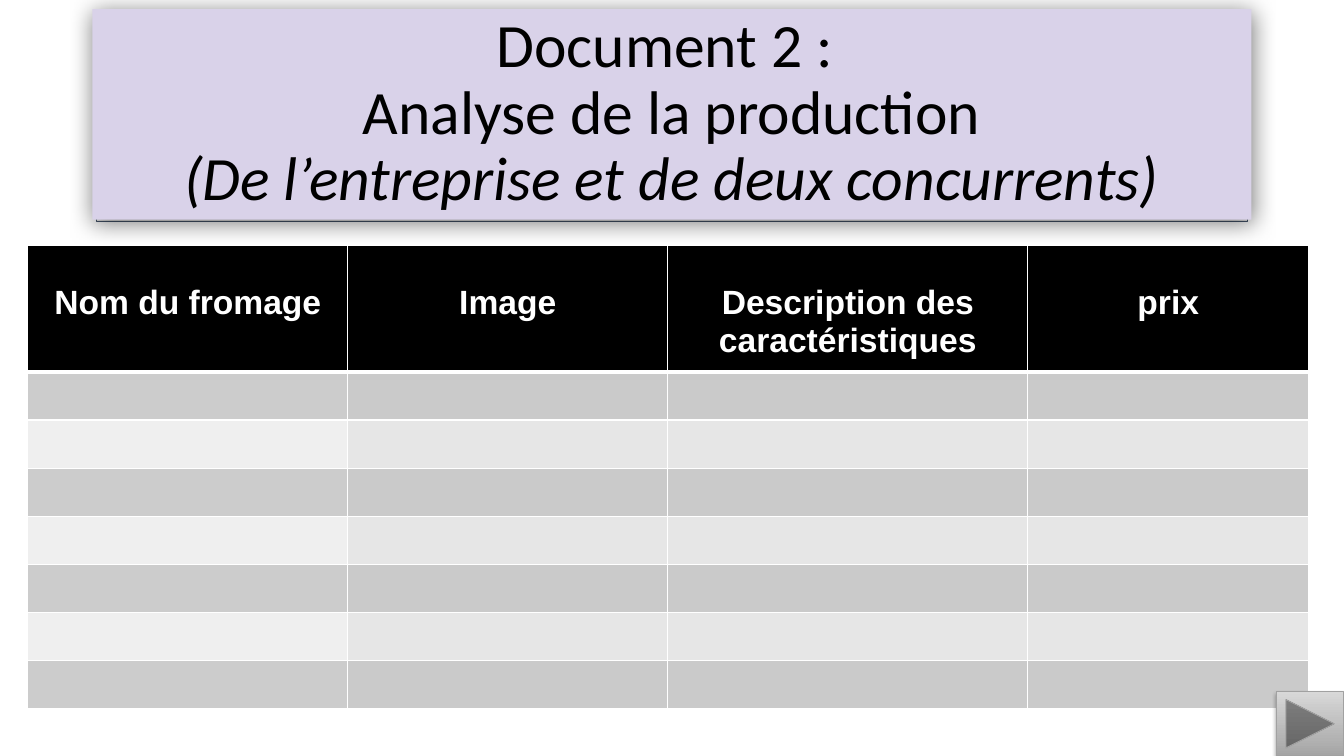
import pptx
import pptx.dml.color
import pptx.enum.shapes
import pptx.enum.text
import pptx.oxml
import pptx.oxml.ns
import pptx.util

Pt = pptx.util.Pt
MSO_SHAPE = pptx.enum.shapes.MSO_SHAPE
CENTER = pptx.enum.text.PP_ALIGN.CENTER


def rgb(hex_code):
    return pptx.dml.color.RGBColor.from_string(hex_code)


def add_shadow(shape, opacity, blur, distance):
    """Give the shape a black shadow that falls straight down."""
    shape.shadow.inherit = False
    effects = shape._element.spPr.find(pptx.oxml.ns.qn("a:effectLst"))
    effects.append(pptx.oxml.parse_xml(
        f'<a:outerShdw {pptx.oxml.ns.nsdecls("a")} blurRad="{Pt(blur)}" '
        f'dist="{Pt(distance)}" dir="5400000" rotWithShape="0">'
        f'<a:srgbClr val="000000"><a:alpha val="{opacity * 1000}"/></a:srgbClr>'
        '</a:outerShdw>'))


presentation = pptx.Presentation()
presentation.slide_width = Pt(960)
presentation.slide_height = Pt(540)
slide = presentation.slides.add_slide(presentation.slide_layouts[6])

# Title panel
title_backing = slide.shapes.add_shape(
    MSO_SHAPE.RECTANGLE, Pt(69), Pt(7), Pt(822), Pt(151))
title_backing.shadow.inherit = False
title_backing.fill.solid()
title_backing.fill.fore_color.rgb = rgb("E7E6E6")
title_backing.line.color.rgb = rgb("44546A")
title_backing.line.width = Pt(0.75)

title = slide.shapes.add_shape(
    MSO_SHAPE.RECTANGLE, Pt(66), Pt(6.5), Pt(828), Pt(150.5))
title.fill.solid()
title.fill.fore_color.rgb = rgb("D9D2E9")
title.line.fill.background()
add_shadow(title, 50, 16.9, 1.5)
title.text_frame.word_wrap = True
title.text_frame.vertical_anchor = pptx.enum.text.MSO_ANCHOR.MIDDLE
title.text_frame.text = ("Document 2 : \nAnalyse de la production\n"
                         "(De l’entreprise et de deux concurrents)")
for paragraph in title.text_frame.paragraphs:
    paragraph.alignment = CENTER
    paragraph.line_spacing = 0.9
    for run in paragraph.runs:
        run.font.name = "Calibri"
        run.font.size = Pt(44)
        run.font.color.rgb = rgb("000000")
title.text_frame.paragraphs[2].runs[0].font.italic = True

# Cheese table
headings = ["Nom du fromage", "Image", "Description des caractéristiques", "prix"]
column_widths = [228.6, 228.6, 257.2, 200.6]
header_height, row_height, blank_rows = 90, 34.4, 7
cheeses = slide.shapes.add_table(
    1 + blank_rows, len(headings), Pt(19.8), Pt(175.6), Pt(sum(column_widths)),
    Pt(header_height + blank_rows * row_height)).table
for column, width in zip(cheeses.columns, column_widths):
    column.width = Pt(width)
for row_index, row in enumerate(cheeses.rows):
    row.height = Pt(row_height if row_index else header_height)
    for column_index, cell in enumerate(row.cells):
        for side in "LRTB":
            under_header = (row_index, side) in [(0, "B"), (1, "T")]
            cell._tc.get_or_add_tcPr().append(pptx.oxml.parse_xml(
                f'<a:ln{side} {pptx.oxml.ns.nsdecls("a")} '
                f'w="{Pt(3 if under_header else 1)}"><a:solidFill>'
                f'<a:srgbClr val="FFFFFF"/></a:solidFill></a:ln{side}>'))
        if row_index == 0:
            fill = "000000"
        elif row_index % 2:
            fill = "CACACA" if column_index else "CCCCCC"
        else:
            fill = "E6E6E6" if column_index else "EFEFEF"
        cell.fill.solid()
        cell.fill.fore_color.rgb = rgb(fill)

for cell, heading in zip(cheeses.rows[0].cells, headings):
    cell.margin_left = cell.margin_right = Pt(5)
    cell.margin_top, cell.margin_bottom = Pt(27.6), Pt(0)
    paragraph = cell.text_frame.paragraphs[0]
    paragraph.text = heading
    paragraph.alignment = CENTER
    font = paragraph.runs[0].font
    font.name = "Arial"
    font.size = Pt(24)
    font.bold = True
    font.color.rgb = rgb("FFFFFF")

# Next button
next_button = slide.shapes.add_shape(
    MSO_SHAPE.ACTION_BUTTON_FORWARD_OR_NEXT, Pt(911.7), Pt(494), Pt(48.3), Pt(46))
next_button.fill.gradient()
next_button.fill.gradient_angle = 90
for stop, shade in zip(next_button.fill.gradient_stops, ["A5A5A5", "D8D8D8"]):
    stop.color.rgb = rgb(shade)
next_button.line.color.rgb = rgb("A1A1A1")
next_button.line.width = Pt(0.75)
add_shadow(next_button, 35, 3.1, 1.8)

presentation.save("out.pptx")
